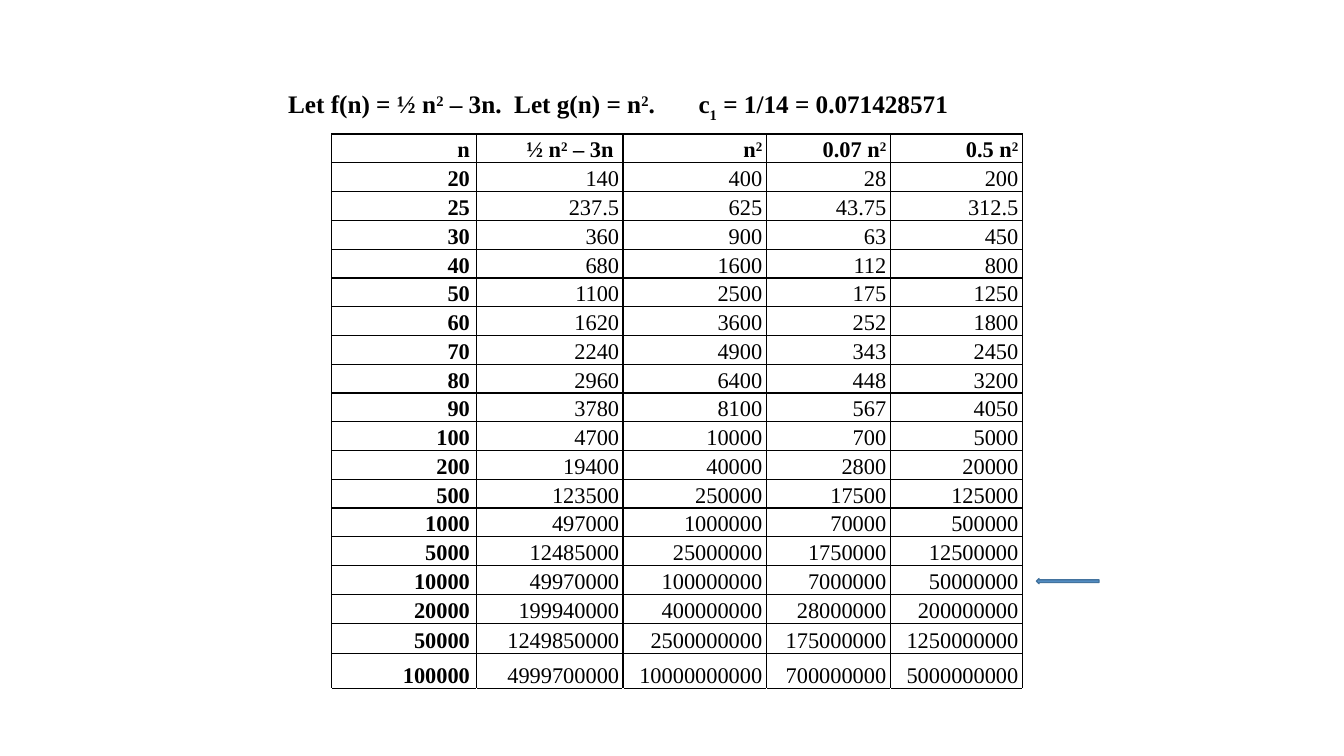
from lxml import etree
from pptx import Presentation
from pptx import util as u
from pptx.dml.color import RGBColor
from pptx.enum import shapes, text
from pptx.oxml import ns

# Content: each run is (text, baseline shift in percent)
FORMULAS = [("Let f(n) = ½ n", 0), ("2", 30), (" – 3n.  Let g(n) = n", 0), ("2", 30),
            (".\tc", 0), ("1", -25), (" = 1/14 = 0.071428571", 0)]
HEADERS = [
    [("n", 0)],
    [("½ n", 0), ("2", 30), (" – 3n ", 0)],
    [("n", 0), ("2", 30)],
    [("0.07 n", 0), ("2", 30)],
    [("0.5 n", 0), ("2", 30)],
]
SIZES = [20, 25, 30, 40, 50, 60, 70, 80, 90, 100, 200, 500,
         1000, 5000, 10000, 20000, 50000, 100000]
COLUMN_WIDTHS = [1.44, 1.45, 1.42, 1.23, 1.31]
ROW_HEIGHTS = [0.25] * 17 + [0.3, 0.35, 0.38]
FONT, BLACK, WHITE = "Times New Roman", "000000", "FFFFFF"


def color(value):
    return RGBColor.from_string(value)


def write(paragraph, runs, size, bold):
    for words, baseline in runs:
        run = paragraph.add_run()
        run.text = words
        if baseline:
            run.font._element.set("baseline", str(baseline * 1000))
    paragraph.font.name = FONT
    paragraph.font.size = u.Pt(size)
    paragraph.font.bold = bold
    paragraph.font.color.rgb = color(BLACK)


def set_borders(cell, colors):
    properties = cell._tc.get_or_add_tcPr()
    for index, (side, value) in enumerate(zip("LRTB", colors)):
        line = etree.Element(ns.qn(f"a:ln{side}"), w=str(u.Pt(1)))
        fill = etree.SubElement(line, ns.qn("a:solidFill"))
        etree.SubElement(fill, ns.qn("a:srgbClr"), val=value)
        properties.insert(index, line)


def growth_row(n):
    values = [n, n * n / 2 - 3 * n, n * n, 0.07 * n * n, 0.5 * n * n]
    return [[(f"{value:.12g}", 0)] for value in values]


presentation = Presentation()
presentation.slide_width = u.Inches(13.33)
presentation.slide_height = u.Inches(7.5)
slide = presentation.slides.add_slide(presentation.slide_layouts[6])

# Formulas above the table, with a tab stop before the constant
box = slide.shapes.add_textbox(u.Inches(2.76), u.Inches(0.83), u.Inches(7.17), u.Inches(0.4))
box.text_frame.word_wrap = True
box.text_frame.auto_size = text.MSO_AUTO_SIZE.SHAPE_TO_FIT_TEXT
paragraph = box.text_frame.paragraphs[0]
write(paragraph, FORMULAS, 18, True)
tabs = etree.Element(ns.qn("a:tabLst"))
etree.SubElement(tabs, ns.qn("a:tab"), pos=str(u.Inches(4.07)), algn="l")
paragraph._p.get_or_add_pPr().insert(0, tabs)

# Growth table, closed by an empty row with white edges
rows = [HEADERS] + [growth_row(n) for n in SIZES] + [[[]] * len(HEADERS)]
table = slide.shapes.add_table(
    len(rows), len(HEADERS), u.Inches(3.29), u.Inches(1.33),
    u.Inches(sum(COLUMN_WIDTHS)), u.Inches(sum(ROW_HEIGHTS))).table
table.first_row = table.horz_banding = False
for column, width in zip(table.columns, COLUMN_WIDTHS):
    column.width = u.Inches(width)
for row_index, (row, height) in enumerate(zip(rows, ROW_HEIGHTS)):
    table.rows[row_index].height = u.Inches(height)
    for column_index, runs in enumerate(row):
        cell = table.cell(row_index, column_index)
        cell.fill.solid()
        cell.fill.fore_color.rgb = color(WHITE)
        cell.vertical_anchor = text.MSO_ANCHOR.BOTTOM
        cell.margin_left = cell.margin_right = u.Inches(0.04 if column_index else 0.07)
        cell.margin_top = cell.margin_bottom = 0
        paragraph = cell.text_frame.paragraphs[0]
        paragraph.alignment = text.PP_ALIGN.RIGHT
        paragraph.line_spacing = 1.07
        write(paragraph, runs, 16, row_index == 0 or column_index == 0)
        set_borders(cell, [BLACK] * 4 if runs else [WHITE, WHITE, BLACK, WHITE])

# Arrow pointing at the row for n = 10000
arrow = slide.shapes.add_shape(shapes.MSO_SHAPE.LEFT_ARROW, u.Inches(10.28), u.Inches(5.74),
                               u.Inches(0.62), u.Inches(0.05))
arrow.shadow.inherit = False
arrow.fill.solid()
arrow.fill.fore_color.rgb = color("5B9BD5")
arrow.line.color.rgb = color("43739E")
arrow.line.width = u.Pt(1)

presentation.save("out.pptx")
